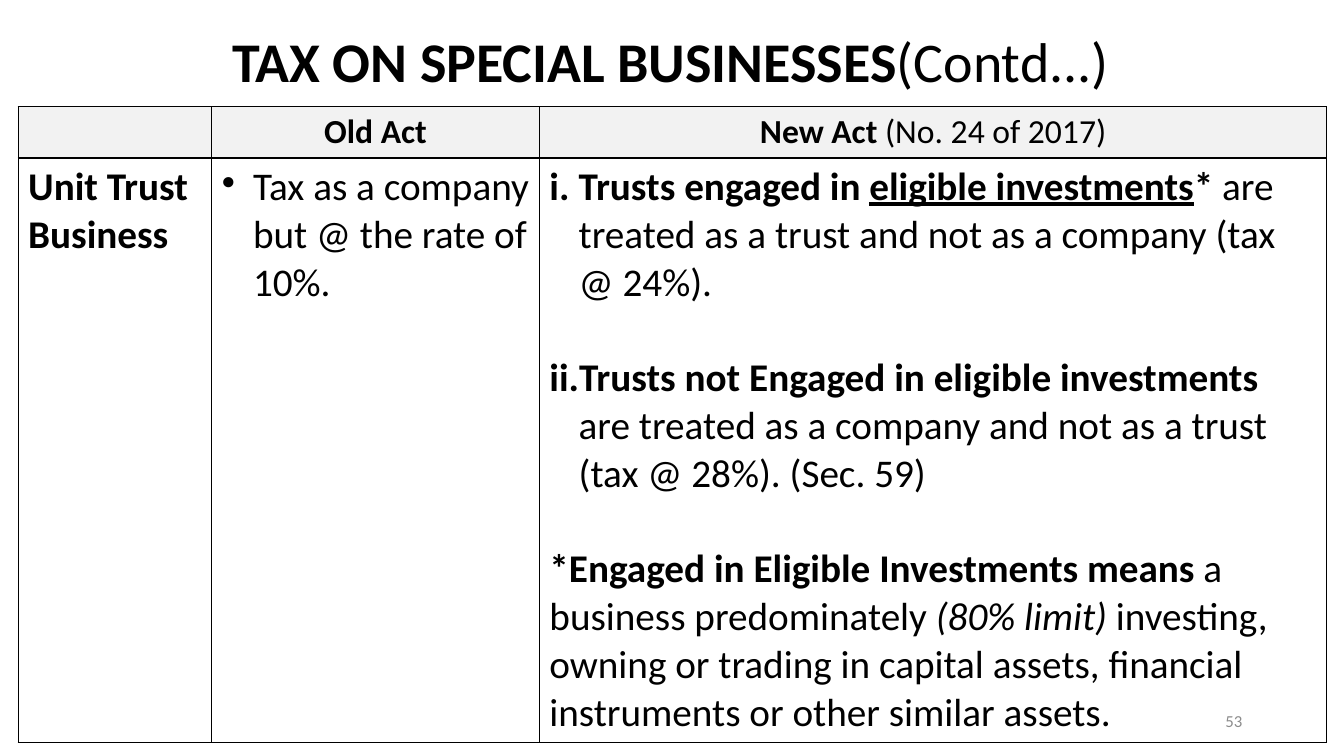
"""Build the slide comparing unit trust taxation under the old and new acts."""
from lxml import etree
from pptx import Presentation
from pptx.dml.color import RGBColor
from pptx.enum import text
from pptx.oxml import ns
from pptx.util import Inches, Pt


def add_run(p, content, size=28, color="000000", bold=False, italic=False, underline=False):
    r = p.add_run()
    r.text = content
    f = r.font
    f.name, f.size = "Calibri", Pt(size)
    f.bold, f.italic, f.underline = bold, italic, underline
    f.color.rgb = RGBColor.from_string(color)


def add_bullet(p, indent, tag, **attributes):
    pPr = p._p.get_or_add_pPr()
    pPr.set("marL", str(Inches(indent)))
    pPr.set("indent", str(-Inches(indent)))
    etree.SubElement(pPr, ns.qn(tag), **attributes)


B = {"bold": True}
CENTER = text.PP_ALIGN.CENTER

prs = Presentation()
prs.slide_width, prs.slide_height = Inches(13.33), Inches(7.5)
s = prs.slides.add_slide(prs.slide_layouts[5])

title = s.shapes.title
title.left, title.top = Inches(0.37), Inches(0.21)
title.width, title.height = Inches(12.56), Inches(0.77)
tf = title.text_frame
tf.auto_size = text.MSO_AUTO_SIZE.NONE
tf.vertical_anchor = text.MSO_ANCHOR.TOP
p = tf.paragraphs[0]
p.alignment = CENTER
add_run(p, "TAX ON SPECIAL BUSINESSES", size=40, bold=True)
add_run(p, "(Contd...)", size=40)

widths, heights = [1.92, 3.25, 7.81], [0.48, 5.74]
table = s.shapes.add_table(2, 3, Inches(0.18), Inches(1.06),
                           Inches(sum(widths)), Inches(sum(heights))).table
table.first_row = table.horz_banding = False
for column, width in zip(table.columns, widths):
    column.width = Inches(width)
for row, height in zip(table.rows, heights):
    row.height = Inches(height)

for i, row in enumerate(table.rows):
    for cell in row.cells:
        cell.fill.solid()
        cell.fill.fore_color.rgb = RGBColor.from_string("FFFFFF" if i else "F2F2F2")
        tcPr = cell._tc.get_or_add_tcPr()
        for position, side in enumerate(("lnL", "lnR", "lnT", "lnB")):
            ln = etree.Element(ns.qn(f"a:{side}"), w=str(Pt(1)))
            fill = etree.SubElement(ln, ns.qn("a:solidFill"))
            etree.SubElement(fill, ns.qn("a:srgbClr"), val="000000")
            tcPr.insert(position, ln)

headings = [("Old Act", ""), ("New Act ", "(No. 24 of 2017)")]
for column, (name, detail) in enumerate(headings, start=1):
    p = table.cell(0, column).text_frame.paragraphs[0]
    p.alignment = CENTER
    add_run(p, name, size=24, bold=True)
    if detail:
        add_run(p, detail, size=24)

add_run(table.cell(1, 0).text_frame.paragraphs[0], "Unit Trust Business", bold=True)

p = table.cell(1, 1).text_frame.paragraphs[0]
add_bullet(p, 0.31, "a:buChar", char="•")
add_run(p, "Tax as a company but @ the rate of 10%.")

new_act = [
    [("Trusts engaged in ", B),
     ("eligible investments", {"bold": True, "underline": True}),
     ("* ", B),
     ("are treated as a trust and not as a company (tax @ 24%).", {})],
    [("Trusts not Engaged in eligible investments ", B),
     ("are treated as a company and not as a trust (tax @ 28%). (Sec. 59)", {})],
    [("*Engaged in Eligible Investments means", B),
     (" a business predominately ", {}),
     ("(80% limit) ", {"italic": True}),
     ("investing, owning or trading in capital assets, financial instruments "
      "or other similar assets.", {})],
]
tf = table.cell(1, 2).text_frame
for i, runs in enumerate(new_act):
    p = tf.add_paragraph() if i else tf.paragraphs[0]
    if i:
        p.space_before = Pt(34)
    if i < 2:
        add_bullet(p, 0.29, "a:buFont", typeface="+mj-lt")
        add_bullet(p, 0.29, "a:buAutoNum", type="romanLcPeriod", startAt=str(i + 1))
    for content, style in runs:
        add_run(p, content, **style)

number = s.shapes.add_textbox(Inches(9.42), Inches(6.95), Inches(3), Inches(0.4))
tf = number.text_frame
tf.word_wrap = True
tf.vertical_anchor = text.MSO_ANCHOR.MIDDLE
p = tf.paragraphs[0]
p.alignment = text.PP_ALIGN.RIGHT
add_run(p, "53", size=12, color="8C8C8C")

prs.save("out.pptx")
